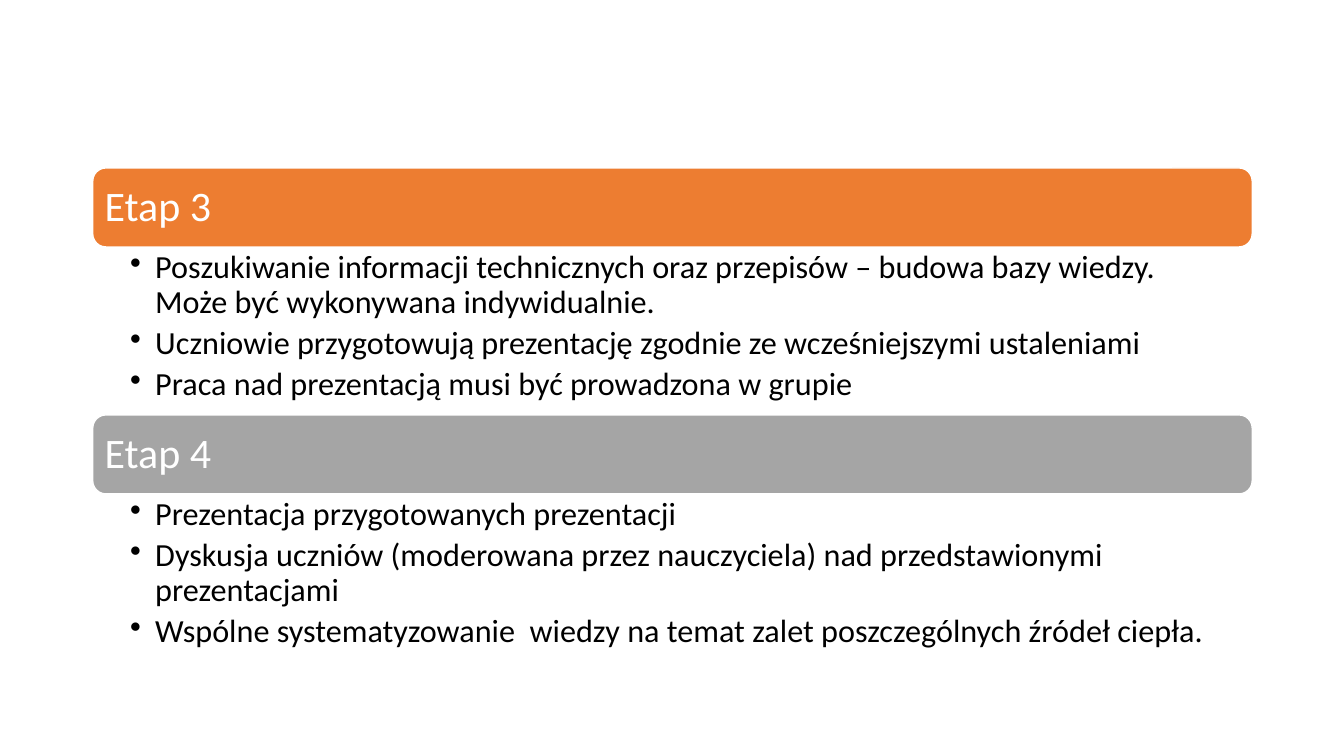
from pptx import Presentation
from pptx import util as u
from pptx.dml.color import RGBColor
from pptx.enum import shapes, text
from lxml import etree

COLUMN, ROW = 0.46, 0.49  # grid cell, in inches
LEFT, WIDTH = 2, 25  # columns
TOP, BAR_ROWS, LIST_ROWS = 3.4, 1.6, 3.4  # rows

STAGES = [
    ("Etap 3", "ED7D31", [
        "Poszukiwanie informacji technicznych oraz przepisów – budowa bazy wiedzy. "
        "Może być wykonywana indywidualnie.",
        "Uczniowie przygotowują prezentację zgodnie ze wcześniejszymi ustaleniami",
        "Praca nad prezentacją musi być prowadzona w grupie",
    ]),
    ("Etap 4", "A5A5A5", [
        "Prezentacja przygotowanych prezentacji",
        "Dyskusja uczniów (moderowana przez nauczyciela) nad przedstawionymi "
        "prezentacjami",
        "Wspólne systematyzowanie  wiedzy na temat zalet poszczególnych źródeł ciepła.",
    ]),
]


def color(hex_value):
    return RGBColor.from_string(hex_value)


class StageSlide:
    font = "Calibri"
    heading_size, point_size = 30, 23
    light, dark = "FFFFFF", "000000"

    def __init__(self, slide):
        self.slide = slide

    def area(self, row, rows):
        """Return left, top, width and height of a full-width band of grid rows."""
        return (u.Inches(LEFT * COLUMN), u.Inches(row * ROW),
                u.Inches(WIDTH * COLUMN), u.Inches(rows * ROW))

    def set_margins(self, frame, left, top, right, bottom):
        frame.word_wrap = True
        frame.margin_left, frame.margin_right = u.Inches(left), u.Inches(right)
        frame.margin_top, frame.margin_bottom = u.Inches(top), u.Inches(bottom)

    def format_paragraph(self, paragraph, size, ink):
        paragraph.alignment = text.PP_ALIGN.LEFT
        paragraph.line_spacing = 0.9
        for run in paragraph.runs:
            run.font.name = self.font
            run.font.size = u.Pt(size)
            run.font.color.rgb = color(ink)

    def add_bullet(self, paragraph):
        properties = paragraph._p.get_or_add_pPr()
        properties.set("marL", str(u.Inches(0.25)))
        properties.set("indent", str(-u.Inches(0.25)))
        namespace = properties.nsmap["a"]
        etree.SubElement(properties, f"{{{namespace}}}buChar", char="•")

    def heading(self, row, title, fill):
        bar = self.slide.shapes.add_shape(
            shapes.MSO_SHAPE.ROUNDED_RECTANGLE, *self.area(row, BAR_ROWS))
        bar.shadow.inherit = False
        bar.fill.solid()
        bar.fill.fore_color.rgb = color(fill)
        bar.line.color.rgb = color(self.light)
        bar.line.width = u.Pt(1)
        frame = bar.text_frame
        # The rounded corners already inset the text by 0.04 inches.
        self.set_margins(frame, 0.08, 0.08, 0.08, 0.08)
        frame.vertical_anchor = text.MSO_ANCHOR.MIDDLE
        frame.text = title
        self.format_paragraph(frame.paragraphs[0], self.heading_size, self.light)

    def points(self, row, tasks):
        frame = self.slide.shapes.add_textbox(*self.area(row, LIST_ROWS)).text_frame
        self.set_margins(frame, 0.37, 0.04, 0.23, 0.04)
        frame.text = "\n".join(tasks)
        for task in frame.paragraphs:
            self.format_paragraph(task, self.point_size, self.dark)
            task.space_after = u.Pt(4.6)
            self.add_bullet(task)


def main():
    deck = Presentation()
    deck.slide_width, deck.slide_height = u.Inches(13.33), u.Inches(7.5)
    blank_layout = deck.slide_layouts[6]
    page = StageSlide(deck.slides.add_slide(blank_layout))
    for index, (title, fill, tasks) in enumerate(STAGES):
        row = TOP + index * (BAR_ROWS + LIST_ROWS)
        page.heading(row, title, fill)
        page.points(row + BAR_ROWS, tasks)
    deck.save("out.pptx")


if __name__ == "__main__":
    main()
